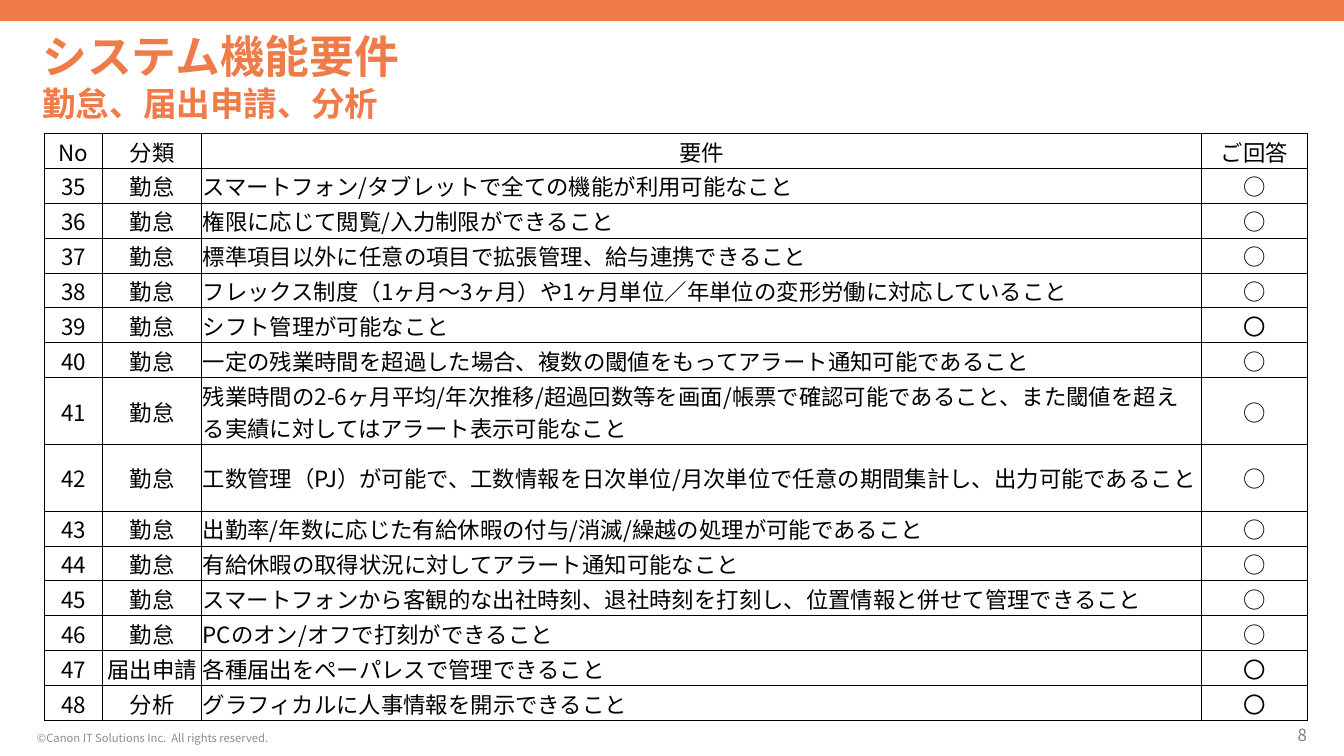
from lxml import etree
from pptx import Presentation
from pptx.dml.color import RGBColor
from pptx.enum.shapes import MSO_SHAPE
from pptx.enum.text import MSO_ANCHOR, PP_ALIGN
from pptx.oxml.ns import qn
from pptx.util import Cm, Pt

LEFT, CENTER, RIGHT = PP_ALIGN.LEFT, PP_ALIGN.CENTER, PP_ALIGN.RIGHT
TOP, MIDDLE, BOTTOM = MSO_ANCHOR.TOP, MSO_ANCHOR.MIDDLE, MSO_ANCHOR.BOTTOM
RECTANGLE = MSO_SHAPE.RECTANGLE

HEADER = ("No", "分類", "要件", "ご回答")
FIRST_NUMBER = 35
TWO_LINE_NUMBERS = ("41", "42")
REQUIREMENTS = [
    ("勤怠", "スマートフォン/タブレットで全ての機能が利用可能なこと", "○"),
    ("勤怠", "権限に応じて閲覧/入力制限ができること", "○"),
    ("勤怠", "標準項目以外に任意の項目で拡張管理、給与連携できること", "○"),
    ("勤怠", "フレックス制度（1ヶ月～3ヶ月）や1ヶ月単位／年単位の変形労働に対応していること", "○"),
    ("勤怠", "シフト管理が可能なこと", "〇"),
    ("勤怠", "一定の残業時間を超過した場合、複数の閾値をもってアラート通知可能であること", "○"),
    ("勤怠", "残業時間の2-6ヶ月平均/年次推移/超過回数等を画面/帳票で確認可能であること、"
           "また閾値を超える実績に対してはアラート表示可能なこと", "○"),
    ("勤怠", "工数管理（PJ）が可能で、工数情報を日次単位/月次単位で任意の期間集計し、"
           "出力可能であること", "○"),
    ("勤怠", "出勤率/年数に応じた有給休暇の付与/消滅/繰越の処理が可能であること", "○"),
    ("勤怠", "有給休暇の取得状況に対してアラート通知可能なこと", "○"),
    ("勤怠", "スマートフォンから客観的な出社時刻、退社時刻を打刻し、位置情報と併せて管理できること", "○"),
    ("勤怠", "PCのオン/オフで打刻ができること", "○"),
    ("届出申請", "各種届出をペーパレスで管理できること", "〇"),
    ("分析", "グラフィカルに人事情報を開示できること", "〇"),
]


def rgb(value):
    return RGBColor.from_string(value)


def write(para, text, size=12, color="000000", bold=False, align=LEFT,
          font="Noto Sans CJK JP"):
    para.alignment = align
    span = para.add_run()
    span.text = text
    span.font.size = Pt(size)
    span.font.bold = bold
    span.font.name = font
    span.font.color.rgb = rgb(color)
    east_asian = etree.SubElement(span.font._element, qn("a:ea"))
    east_asian.set("typeface", font)


def add_borders(cell, color, width):
    properties = cell._tc.get_or_add_tcPr()
    for position, side in enumerate(("lnL", "lnR", "lnT", "lnB")):
        line = etree.Element(qn(f"a:{side}"), w=str(Pt(width)))
        fill = etree.SubElement(line, qn("a:solidFill"))
        etree.SubElement(fill, qn("a:srgbClr"), val=color)
        properties.insert(position, line)


class SlideBuilder:
    accent = "EE7B48"
    ink = "000000"

    def __init__(self, page):
        self.page = page

    def bar(self, left, top, width, height):
        bar = self.page.shapes.add_shape(
            RECTANGLE, Cm(left), Cm(top), Cm(width), Cm(height))
        bar.shadow.inherit = False
        bar.fill.solid()
        bar.fill.fore_color.rgb = rgb(self.accent)
        bar.line.fill.background()

    def text(self, left, top, width, height, lines, anchor=TOP, **style):
        """Place one paragraph for each (text, size) pair in lines."""
        box = self.page.shapes.add_textbox(
            Cm(left), Cm(top), Cm(width), Cm(height))
        frame = box.text_frame
        frame.word_wrap = True
        frame.vertical_anchor = anchor
        frame.margin_left = frame.margin_right = 0
        frame.margin_top = frame.margin_bottom = 0
        for index, (text, size) in enumerate(lines):
            para = frame.add_paragraph() if index else frame.paragraphs[0]
            write(para, text, size=size, **style)

    def table(self, left, top, widths, heights, rows, left_column):
        """Centre every cell except the body cells of left_column."""
        table = self.page.shapes.add_table(
            len(rows), len(widths), Cm(left), Cm(top),
            Cm(sum(widths)), Cm(sum(heights))).table
        table.first_row = table.horz_banding = False
        for column, width in zip(table.columns, widths):
            column.width = Cm(width)
        for row_index, (values, height) in enumerate(zip(rows, heights)):
            table.rows[row_index].height = Cm(height)
            for column_index, value in enumerate(values):
                is_left = row_index > 0 and column_index == left_column
                self.fill_cell(table.cell(row_index, column_index), value,
                               LEFT if is_left else CENTER)

    def fill_cell(self, cell, value, align):
        cell.fill.background()
        cell.vertical_anchor = MIDDLE
        cell.margin_left = cell.margin_right = cell.margin_top = Cm(0.02)
        cell.margin_bottom = 0
        write(cell.text_frame.paragraphs[0], value, color=self.ink, align=align)
        add_borders(cell, self.ink, 0.5)


def main():
    deck = Presentation()
    deck.slide_width, deck.slide_height = Cm(25.4), Cm(14.29)
    builder = SlideBuilder(deck.slides.add_slide(deck.slide_layouts[6]))

    builder.bar(0, 0, 25.4, 0.4)
    builder.text(23.7, 13.7, 1, 0.38, [("8", 9)], anchor=BOTTOM,
                 color="808080", align=RIGHT)
    builder.text(0.7, 13.7, 6, 0.38,
                 [("©Canon IT Solutions Inc.  All rights reserved.", 6)],
                 anchor=BOTTOM, color="8C8C8C")
    builder.text(0.8, 0.55, 20, 1.9,
                 [("システム機能要件", 24), ("勤怠、届出申請、分析", 18)],
                 color=builder.accent, bold=True)

    rows = [HEADER] + [(str(number), *requirement) for number, requirement
                       in enumerate(REQUIREMENTS, FIRST_NUMBER)]
    heights = [1.26 if row[0] in TWO_LINE_NUMBERS else 0.66 for row in rows]
    builder.table(0.84, 2.52, (1.1, 1.87, 18.9, 2), heights, rows, left_column=2)
    deck.save("out.pptx")


if __name__ == "__main__":
    main()
